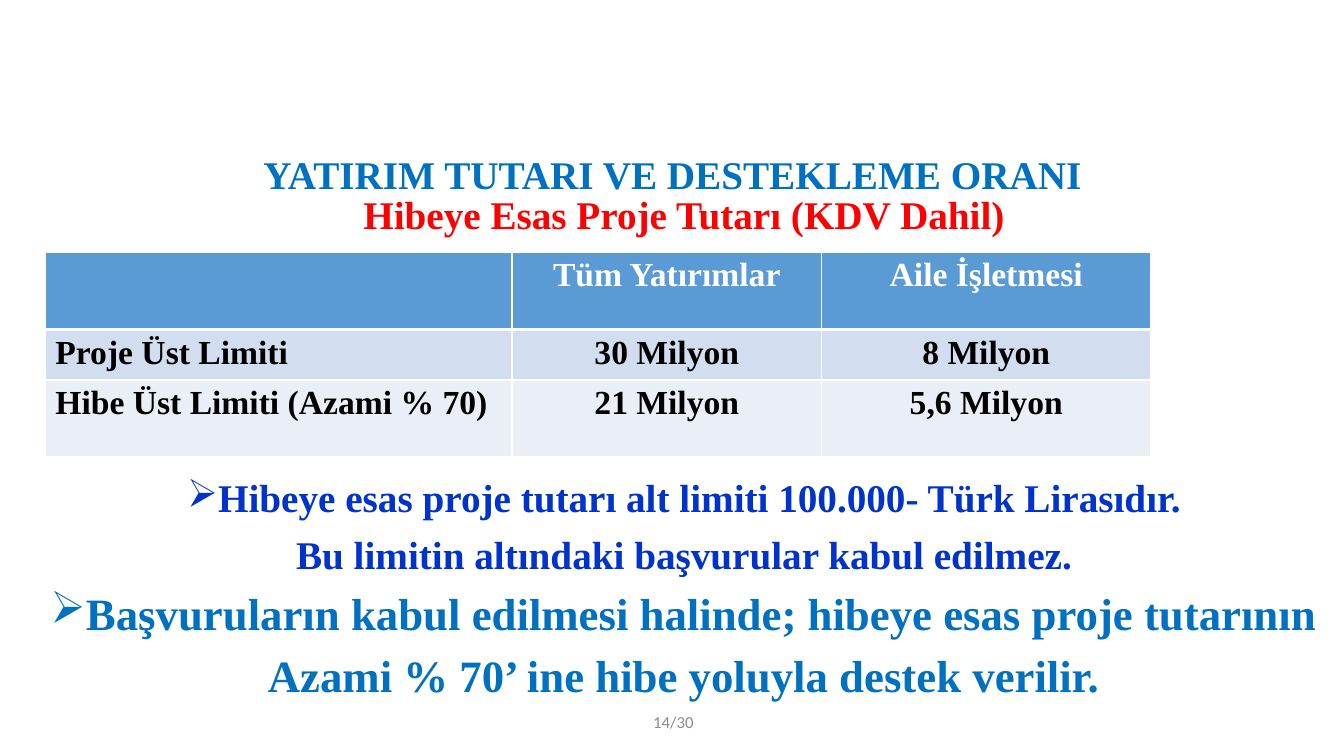
from lxml import etree
from pptx import Presentation
from pptx.dml.color import RGBColor
from pptx.enum import text
from pptx.oxml import ns
from pptx.util import Pt

COLORS = {
    "white": "FFFFFF", "black": "000000", "gray": "8C8C8C",
    "red": "FF0000", "blue": "0070C0", "dark_blue": "0033CC",
    "header": "5B9BD5", "odd_row": "D2DEEF", "even_row": "EAEFF7",
}
SERIF = "Times New Roman"
CENTER = text.PP_ALIGN.CENTER

COLUMN_WIDTHS = [333.4, 221, 235.4]
ROW_HEIGHTS = [55.4, 34, 54.7]
ROW_FILLS = ["header", "odd_row", "even_row"]
LIMITS = [
    ["", "Tüm Yatırımlar", "Aile İşletmesi"],
    ["Proje Üst Limiti", "30 Milyon", "8 Milyon"],
    ["Hibe Üst Limiti (Azami % 70)", "21 Milyon", "5,6 Milyon"],
]
# text, size, colour, bulleted
NOTES = [
    ("Hibeye esas proje tutarı alt limiti 100.000- Türk Lirasıdır.", 28, "dark_blue", True),
    ("Bu limitin altındaki başvurular kabul edilmez.", 28, "dark_blue", False),
    ("Başvuruların kabul edilmesi halinde; hibeye esas proje tutarının", 32, "blue", True),
    ("Azami % 70’ ine hibe yoluyla destek verilir.", 32, "blue", False),
]


def rgb(name):
    return RGBColor.from_string(COLORS[name])


def style(paragraph, size, color, align=CENTER, font=SERIF, bold=True):
    paragraph.alignment = align
    paragraph.font.name = font
    paragraph.font.size = Pt(size)
    paragraph.font.bold = bold
    paragraph.font.color.rgb = rgb(color)


def add_box(slide, left, top, width, height, anchor=text.MSO_ANCHOR.TOP):
    """Add a wrapping text box and return its text frame."""
    box = slide.shapes.add_textbox(Pt(left), Pt(top), Pt(width), Pt(height))
    frame = box.text_frame
    frame.word_wrap = True
    frame.vertical_anchor = anchor
    return frame


def add_line(slide, content, bounds, size, color, **options):
    """Add a vertically centred text box with one paragraph."""
    frame = add_box(slide, *bounds, anchor=text.MSO_ANCHOR.MIDDLE)
    paragraph = frame.paragraphs[0]
    paragraph.text = content
    paragraph.line_spacing = 0.9
    style(paragraph, size, color, **options)


def add_bullet(paragraph):
    properties = paragraph._p.get_or_add_pPr()
    properties.set("marL", str(Pt(18)))
    properties.set("indent", str(-Pt(18)))
    etree.SubElement(properties, ns.qn("a:buChar")).set("char", "➢")


def add_notes(slide):
    frame = add_box(slide, 17.3, 338.6, 942.5, 176)
    for index, (content, size, color, bulleted) in enumerate(NOTES):
        paragraph = frame.add_paragraph() if index else frame.paragraphs[0]
        paragraph.text = content
        paragraph.line_spacing = 0.9
        if index:
            paragraph.space_before = Pt(10)
        if bulleted:
            add_bullet(paragraph)
        style(paragraph, size, color)


def set_borders(cell, top, bottom):
    """Draw white borders, 1 point wide at the sides."""
    properties = cell._tc.get_or_add_tcPr()
    for side, width in (("L", 1), ("R", 1), ("T", top), ("B", bottom)):
        line = etree.SubElement(properties, ns.qn(f"a:ln{side}"), w=str(Pt(width)))
        fill = etree.SubElement(line, ns.qn("a:solidFill"))
        etree.SubElement(fill, ns.qn("a:srgbClr"), val=COLORS["white"])


def add_limits_table(slide):
    table = slide.shapes.add_table(
        len(LIMITS), len(COLUMN_WIDTHS), Pt(32.4), Pt(180),
        Pt(sum(COLUMN_WIDTHS)), Pt(sum(ROW_HEIGHTS))).table
    for column, width in zip(table.columns, COLUMN_WIDTHS):
        column.width = Pt(width)
    for row, height in enumerate(ROW_HEIGHTS):
        table.rows[row].height = Pt(height)
        for column, content in enumerate(LIMITS[row]):
            cell = table.cell(row, column)
            set_borders(cell, 3 if row == 1 else 1, 3 if row == 0 else 1)
            cell.fill.solid()
            cell.fill.fore_color.rgb = rgb(ROW_FILLS[row])
            cell.text = content
            style(cell.text_frame.paragraphs[0], 24, "black" if row else "white",
                  align=CENTER if column else text.PP_ALIGN.LEFT)


def main():
    presentation = Presentation()
    presentation.slide_width = Pt(960)
    presentation.slide_height = Pt(540)
    slide = presentation.slides.add_slide(presentation.slide_layouts[6])
    add_line(slide, "YATIRIM TUTARI VE DESTEKLEME ORANI",
             (66.2, 104.4, 828, 43.2), 28, "blue")
    add_line(slide, "Hibeye Esas Proje Tutarı (KDV Dahil)",
             (17.3, 136.8, 942.5, 36.2), 28, "red")
    add_limits_table(slide)
    add_notes(slide)
    add_line(slide, "14/30", (457.2, 504, 45.4, 25.2), 12, "gray",
             align=text.PP_ALIGN.RIGHT, font="Calibri", bold=False)
    presentation.save("out.pptx")


if __name__ == "__main__":
    main()
